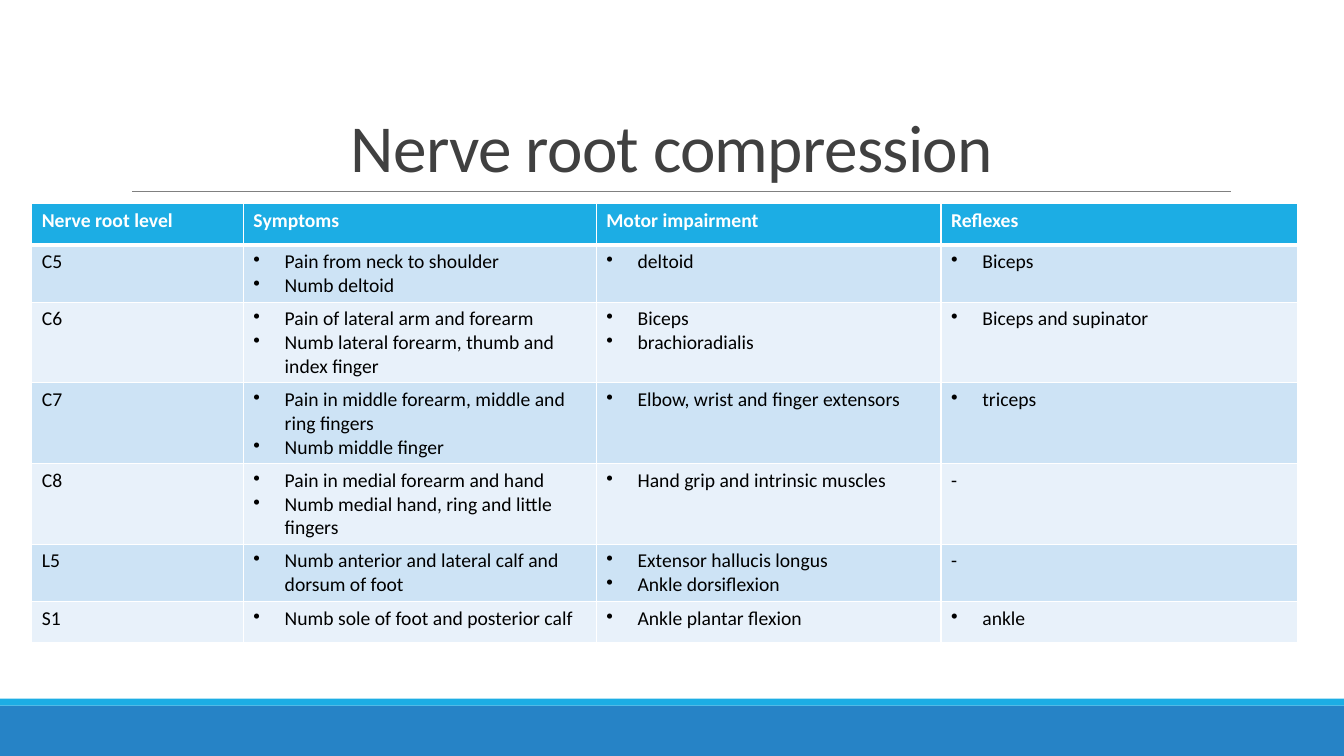
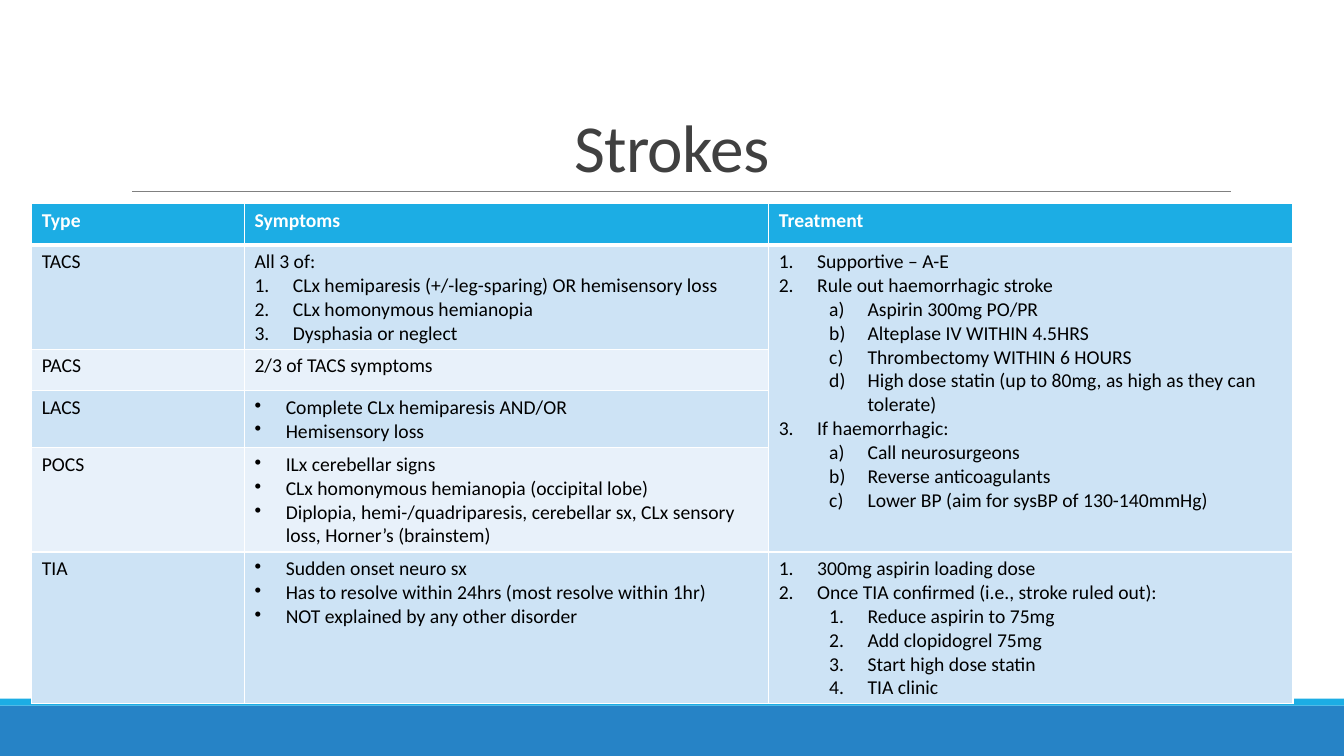
from lxml import etree
from pptx import Presentation
from pptx.dml.color import RGBColor
from pptx.enum.shapes import MSO_CONNECTOR, MSO_SHAPE
from pptx.enum.text import MSO_ANCHOR, PP_ALIGN
from pptx.oxml.ns import qn
from pptx.util import Inches, Pt

RECTANGLE = MSO_SHAPE.RECTANGLE
STRAIGHT = MSO_CONNECTOR.STRAIGHT
BOTTOM = MSO_ANCHOR.BOTTOM
CENTER = PP_ALIGN.CENTER

SLIDE_WIDTH, SLIDE_HEIGHT = Inches(13.33), Inches(7.5)
FONT = "Calibri"
COLORS = {
    "band": "2683C6", "accent": "1CADE4", "rule": "808080", "title": "404040",
    "white": "FFFFFF", "text": "000000", "odd_row": "CDE3F5", "even_row": "E8F1FA",
}

# Boxes as percentages of the slide: left, top, width, height
BAND_BOX = (0, 93.33, 100, 6.67)
STRIPE_BOX = (0, 92.4, 100, 0.93)
TITLE_BOX = (13.35, 4.13, 73.28, 21.2)
RULE_BOX = (9.83, 25.33, 81.75, 0)
TABLE_LEFT, TABLE_TOP, ROW_HEIGHT = 2.36, 26.93, 5.47

# List styles: level, left margin and hanging indent in inches, marker tag, marker attributes
LIST_STYLES = {
    "bullet": (0, 0.31, 0.31, "a:buChar", {"char": "•"}),
    "number": (0, 0.38, 0.38, "a:buAutoNum", {"type": "arabicPeriod"}),
    "letter": (1, 0.88, 0.38, "a:buAutoNum", {"type": "alphaLcParenR"}),
    "subnumber": (1, 0.88, 0.38, "a:buAutoNum", {"type": "arabicPeriod"}),
}


def items(style, *texts):
    return [(style, text) for text in texts]


def bullets(*texts):
    return items("bullet", *texts)


def plain(text):
    return items(None, text)


NERVE_ROOTS = {
    "title": "Nerve root compression",
    "widths": (2.1, 3.5, 3.42, 3.54),
    "width": 94.22,
    "header": ("Nerve root level", "Symptoms", "Motor impairment", "Reflexes"),
    "rows": [
        (plain("C5"), bullets("Pain from neck to shoulder", "Numb deltoid"),
         bullets("deltoid"), bullets("Biceps")),
        (plain("C6"), bullets("Pain of lateral arm and forearm",
                              "Numb lateral forearm, thumb and index finger"),
         bullets("Biceps", "brachioradialis"), bullets("Biceps and supinator")),
        (plain("C7"), bullets("Pain in middle forearm, middle and ring fingers",
                              "Numb middle finger"),
         bullets("Elbow, wrist and finger extensors"), bullets("triceps")),
        (plain("C8"), bullets("Pain in medial forearm and hand",
                              "Numb medial hand, ring and little fingers"),
         bullets("Hand grip and intrinsic muscles"), plain("-")),
        (plain("L5"), bullets("Numb anterior and lateral calf and dorsum of foot"),
         bullets("Extensor hallucis longus", "Ankle dorsiflexion"), plain("-")),
        (plain("S1"), bullets("Numb sole of foot and posterior calf"),
         bullets("Ankle plantar flexion"), bullets("ankle")),
    ],
}

STROKE_TREATMENT = (
    items("number", "Supportive – A-E", "Rule out haemorrhagic stroke")
    + items("letter", "Aspirin 300mg PO/PR", "Alteplase IV WITHIN 4.5HRS",
            "Thrombectomy WITHIN 6 HOURS",
            "High dose statin (up to 80mg, as high as they can tolerate)")
    + items("number", "If haemorrhagic:")
    + items("letter", "Call neurosurgeons", "Reverse anticoagulants",
            "Lower BP (aim for sysBP of 130-140mmHg)")
)
TIA_TREATMENT = (
    items("number", "300mg aspirin loading dose",
          "Once TIA confirmed (i.e., stroke ruled out):")
    + items("subnumber", "Reduce aspirin to 75mg", "Add clopidogrel 75mg",
            "Start high dose statin", "TIA clinic")
)

# None continues the cell above
STROKES = {
    "title": "Strokes",
    "widths": (2.11, 5.2, 5.2),
    "width": 93.85,
    "header": ("Type", "Symptoms", "Treatment"),
    "rows": [
        (plain("TACS"), plain("All 3 of:") + items(
            "number", "CLx hemiparesis (+/-leg-sparing) OR hemisensory loss",
            "CLx homonymous hemianopia", "Dysphasia or neglect"), STROKE_TREATMENT),
        (plain("PACS"), plain("2/3 of TACS symptoms"), None),
        (plain("LACS"), bullets("Complete CLx hemiparesis AND/OR", "Hemisensory loss"), None),
        (plain("POCS"), bullets(
            "ILx cerebellar signs", "CLx homonymous hemianopia (occipital lobe)",
            "Diplopia, hemi-/quadriparesis, cerebellar sx, CLx sensory loss, "
            "Horner’s (brainstem)"), None),
        (plain("TIA"), bullets(
            "Sudden onset neuro sx", "Has to resolve within 24hrs (most resolve within 1hr)",
            "NOT explained by any other disorder"), TIA_TREATMENT),
    ],
}


def color(name):
    return RGBColor.from_string(COLORS[name])


def place(box):
    """Turn percentages of the slide into lengths."""
    sides = (SLIDE_WIDTH, SLIDE_HEIGHT) * 2
    return [round(side * share / 100) for side, share in zip(sides, box)]


def format_run(run, size, color_name, bold=False):
    run.font.name, run.font.size, run.font.bold = FONT, Pt(size), bold
    run.font.color.rgb = color(color_name)


def add_band(slide, box, color_name):
    band = slide.shapes.add_shape(RECTANGLE, *place(box))
    band.shadow.inherit = False
    band.fill.solid()
    band.fill.fore_color.rgb = color(color_name)
    band.line.fill.background()


def add_rule(slide, box):
    left, top, width, height = place(box)
    rule = slide.shapes.add_connector(STRAIGHT, left, top, left + width, top + height)
    rule.line.color.rgb = color("rule")
    rule.line.width = Pt(0.5)
    etree.SubElement(rule.element.spPr, qn("a:effectLst"))


def add_title(slide, box, text):
    text_frame = slide.shapes.add_textbox(*place(box)).text_frame
    text_frame.word_wrap = True
    text_frame.vertical_anchor = BOTTOM
    text_frame.text = text
    paragraph = text_frame.paragraphs[0]
    paragraph.alignment = CENTER
    paragraph.line_spacing = 0.85
    run = paragraph.runs[0]
    format_run(run, 48, "title")
    run.font._element.set("spc", "-50")


def set_list_style(paragraph, style):
    level, margin, hanging, tag, attributes = LIST_STYLES[style]
    paragraph.level = level
    properties = paragraph._p.get_or_add_pPr()
    properties.set("marL", str(Inches(margin)))
    properties.set("indent", str(-Inches(hanging)))
    etree.SubElement(properties, qn(tag), attributes)


def set_borders(cell, widths):
    """Draw white borders; widths are left, right, top and bottom in points."""
    properties = cell._tc.get_or_add_tcPr()
    for side, width in zip("LRTB", widths):
        line = etree.SubElement(properties, qn(f"a:ln{side}"), {"w": str(Pt(width))})
        fill = etree.SubElement(line, qn("a:solidFill"))
        etree.SubElement(fill, qn("a:srgbClr"), {"val": COLORS["white"]})


def fill_cell(cell, row_index, content):
    is_header = row_index == 0
    set_borders(cell, (1, 1, 3 if row_index == 1 else 1, 3 if is_header else 1))
    cell.fill.solid()
    fill_name = "accent" if is_header else ("even_row", "odd_row")[row_index % 2]
    cell.fill.fore_color.rgb = color(fill_name)
    if content is None:
        return
    cell.text_frame.text = "\n".join(text for _, text in content)
    for paragraph, (style, _) in zip(cell.text_frame.paragraphs, content):
        if style:
            set_list_style(paragraph, style)
        format_run(paragraph.runs[0], 14, "white" if is_header else "text", is_header)


def add_grid(slide, box, header, rows, widths):
    rows = [[plain(text) for text in header], *rows]
    left, top, width, height = place(box)
    table = slide.shapes.add_table(len(rows), len(widths), left, top, width, height).table
    table.horz_banding = False
    for column, share in zip(table.columns, widths):
        column.width = round(width * share / sum(widths))
    for row_index, row in enumerate(rows):
        for column_index, content in enumerate(row):
            fill_cell(table.cell(row_index, column_index), row_index, content)
    # Join each run of continued cells to the cell that starts it
    for column_index, column in enumerate(zip(*rows)):
        starts = [index for index, content in enumerate(column) if content is not None]
        for start, end in zip(starts, starts[1:] + [len(rows)]):
            if end - start > 1:
                table.cell(start, column_index).merge(table.cell(end - 1, column_index))


def add_table_slide(presentation, topic):
    slide = presentation.slides.add_slide(presentation.slide_layouts[6])
    add_band(slide, BAND_BOX, "band")
    add_band(slide, STRIPE_BOX, "accent")
    add_rule(slide, RULE_BOX)
    add_title(slide, TITLE_BOX, topic["title"])
    table_height = ROW_HEIGHT * (len(topic["rows"]) + 1)
    table_box = (TABLE_LEFT, TABLE_TOP, topic["width"], table_height)
    add_grid(slide, table_box, topic["header"], topic["rows"], topic["widths"])


def main():
    presentation = Presentation()
    presentation.slide_width, presentation.slide_height = SLIDE_WIDTH, SLIDE_HEIGHT
    for topic in (NERVE_ROOTS, STROKES):
        add_table_slide(presentation, topic)
    presentation.save("out.pptx")


if __name__ == "__main__":
    main()
